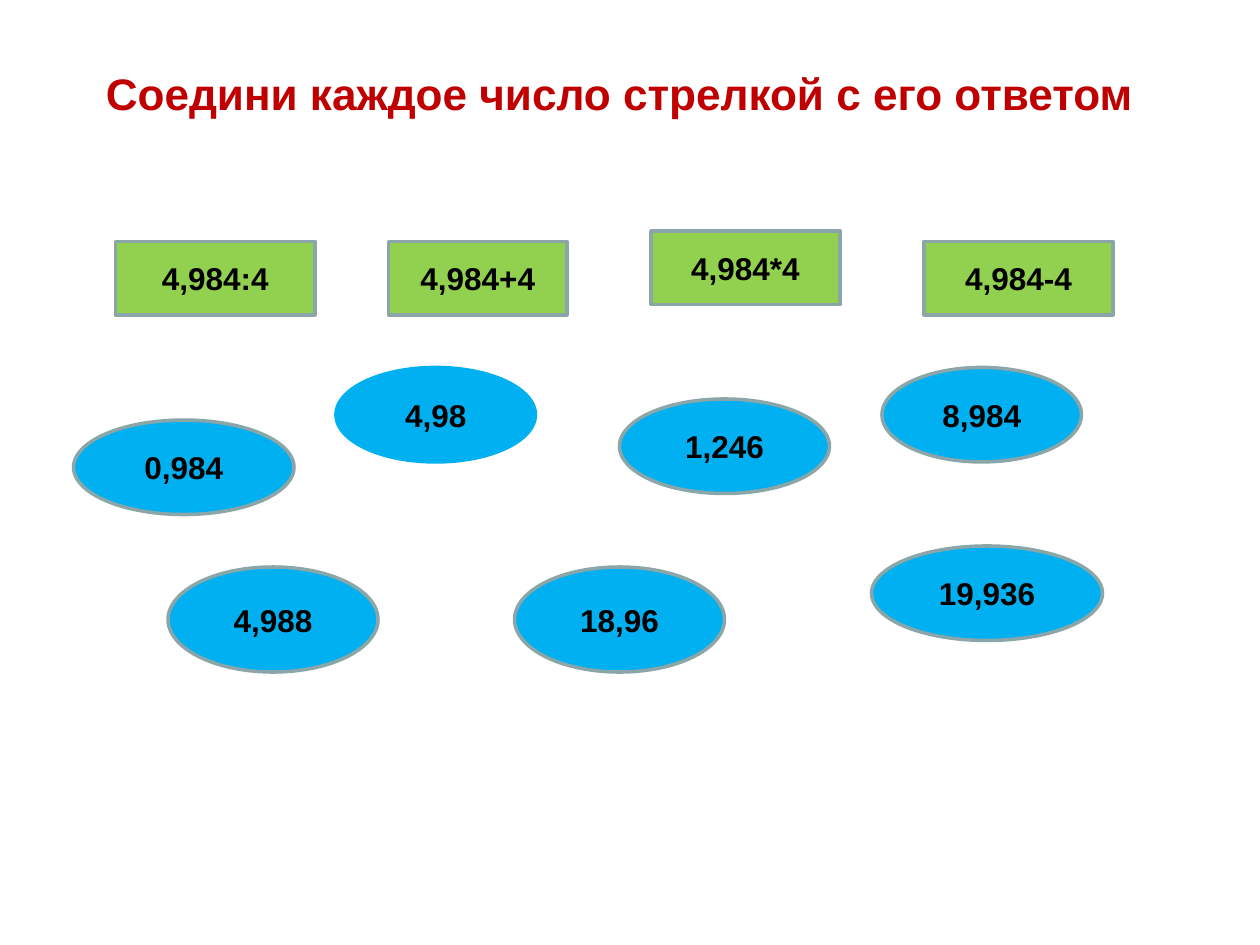
from pptx import Presentation
from pptx.dml.color import RGBColor
from pptx.enum.shapes import MSO_SHAPE
from pptx.enum.text import MSO_ANCHOR, MSO_AUTO_SIZE, PP_ALIGN
from pptx.util import Inches, Pt

RED = RGBColor(0xC0, 0x00, 0x00)
GREEN = RGBColor(0x92, 0xD0, 0x50)
BLUE = RGBColor(0x00, 0xB0, 0xF0)
GREY = RGBColor(0x8A, 0xA6, 0xA8)
BLACK = RGBColor(0x00, 0x00, 0x00)

deck = Presentation()
deck.slide_width = Inches(10)
deck.slide_height = Inches(7.5)
page = deck.slides.add_slide(deck.slide_layouts[5])
CELL = deck.slide_width // 120


def place(box, left, top, width, height):
    box.left, box.top = left * CELL, top * CELL
    box.width, box.height = width * CELL, height * CELL


def write(box, text, size, color, anchor):
    frame = box.text_frame
    frame.word_wrap = True
    frame.auto_size = MSO_AUTO_SIZE.NONE
    frame.vertical_anchor = anchor
    para = frame.paragraphs[0]
    para.alignment = PP_ALIGN.CENTER
    span = para.add_run()
    span.text = text
    span.font.name = "Arial"
    span.font.size = Pt(size)
    span.font.bold = True
    span.font.color.rgb = color


title = page.shapes.title
place(title, 6, 6, 106, 6)
write(title, "Соедини каждое число стрелкой с его ответом", 25.2, RED, MSO_ANCHOR.BOTTOM)

tasks = [
    ("4,984:4", 11, 23, 19, 7, GREY),
    ("4,984+4", 37, 23, 17, 7, GREY),
    ("4,984*4", 62, 22, 18, 7, GREY),
    ("4,984-4", 88, 23, 18, 7, GREY),
]
answers = [
    ("0,984", 7, 40, 21, 9, GREY),
    ("4,98", 32, 35, 19, 9, BLUE),
    ("8,984", 84, 35, 19, 9, GREY),
    ("4,988", 16, 54, 20, 10, GREY),
    ("18,96", 49, 54, 20, 10, GREY),
    ("1,246", 59, 38, 20, 9, GREY),
    ("19,936", 83, 52, 22, 9, GREY),
]

for kind, fill, items in (
    (MSO_SHAPE.RECTANGLE, GREEN, tasks),
    (MSO_SHAPE.OVAL, BLUE, answers),
):
    for text, left, top, width, height, outline in items:
        box = page.shapes.add_shape(kind, 0, 0, CELL, CELL)
        place(box, left, top, width, height)
        box.shadow.inherit = False
        box.fill.solid()
        box.fill.fore_color.rgb = fill
        box.line.color.rgb = outline
        box.line.width = Pt(2)
        write(box, text, 18, BLACK, MSO_ANCHOR.MIDDLE)

deck.save("out.pptx")
